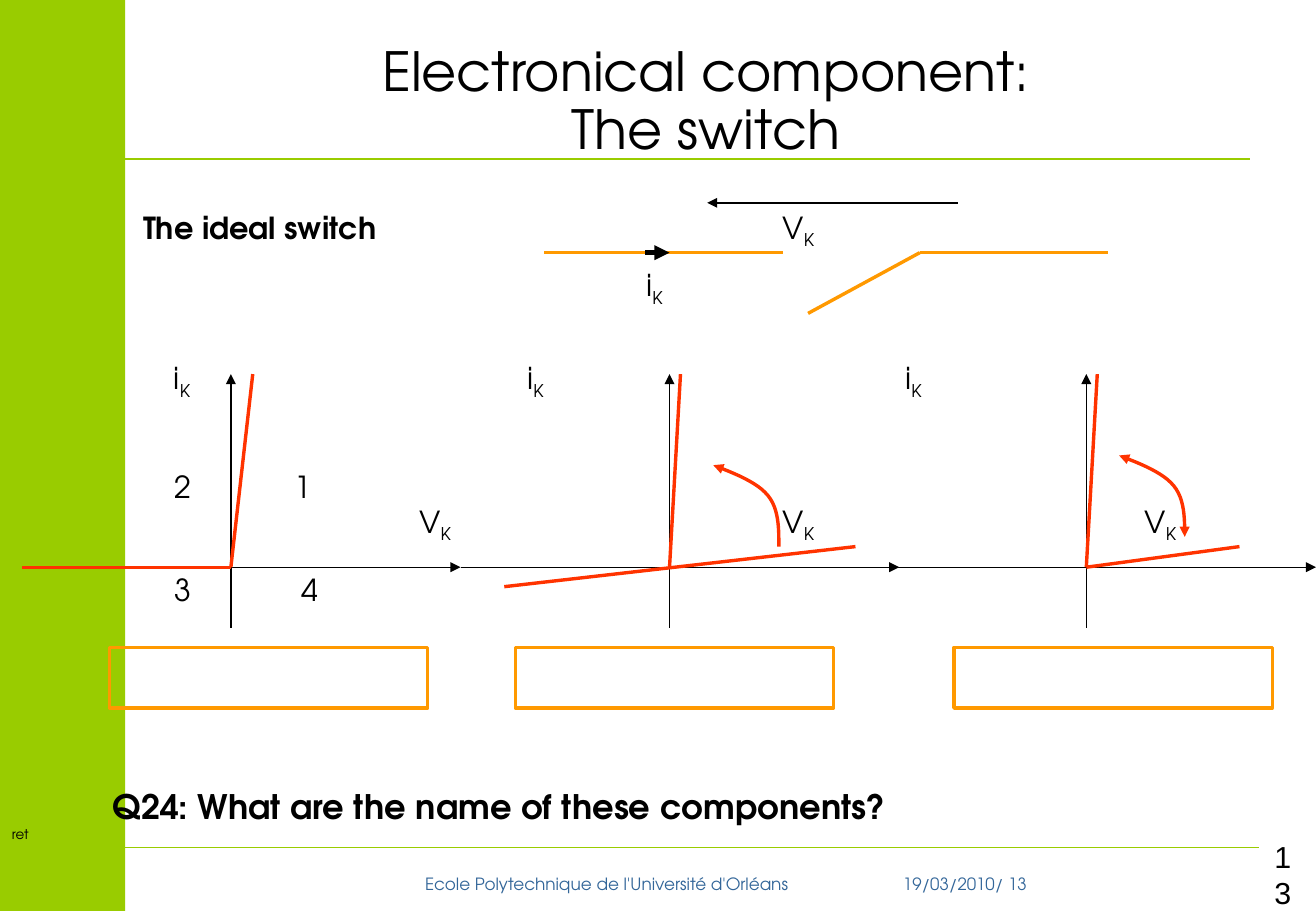
"""Build the slide on the ideal switch and its three characteristics."""
from lxml import etree
from pptx import Presentation, util as u
from pptx.dml.color import RGBColor
from pptx.enum import shapes, text
from pptx.oxml import ns

HUES = {"green": "99CC00", "blue": "336699", "black": "000000",
        "gold": "FF9900", "red": "FF3300"}
FACE = "TeX Gyre Adventor"


def tint(name):
    """Return the named colour."""
    return RGBColor.from_string(HUES[name])


def stroke(shape, hue, width, head=False, tail=False):
    """Set a line's colour and width, and its arrowheads."""
    shape.line.color.rgb = tint(hue)
    shape.line.width = u.Pt(width)
    pen = shape.line._get_or_add_ln()
    for end, used in (("a:headEnd", head), ("a:tailEnd", tail)):
        if used:
            etree.SubElement(pen, ns.qn(end), type="triangle")


def line(slide, start, stop, hue, width, tail=False):
    """Draw a straight line or arrow."""
    link = slide.shapes.add_connector(
        shapes.MSO_CONNECTOR.STRAIGHT, *map(u.Inches, start + stop))
    stroke(link, hue, width, tail=tail)
    etree.SubElement(link._element.spPr, ns.qn("a:effectLst"))


def box(slide, left, top, width, height, fill=None, edge=None):
    """Draw a filled or outlined rectangle."""
    rect = slide.shapes.add_shape(
        shapes.MSO_SHAPE.RECTANGLE, *map(u.Inches, (left, top, width, height)))
    rect.shadow.inherit = False
    if fill:
        rect.fill.solid()
        rect.fill.fore_color.rgb = tint(fill)
    else:
        rect.fill.background()
    if edge:
        stroke(rect, edge, 2)
    else:
        rect.line.fill.background()


def bend(slide, left, top, head=False):
    """Draw a curved arrow that rises to the left."""
    legs = [((0.54, 0.67), (0.54, 0.52), (0.54, 0.36), (0.45, 0.25)),
            ((0.45, 0.25), (0.36, 0.14), (0.18, 0.07), (0, 0))]
    steps = 12
    spots = []
    for leg in legs:
        for step in range(steps + 1):
            t = step / steps
            parts = ((1 - t) ** 3, 3 * t * (1 - t) ** 2, 3 * t * t * (1 - t), t ** 3)
            x, y = (sum(p * c for p, c in zip(parts, axis)) for axis in zip(*leg))
            spots.append((u.Inches(left + x), u.Inches(top + y)))
    pen = slide.shapes.build_freeform(*spots[0])
    pen.add_line_segments(spots[1:], close=False)
    curve = pen.convert_to_shape()
    curve.shadow.inherit = False
    curve.fill.background()
    stroke(curve, "red", 2, head, True)


def add_run(para, words, size, hue="black", bold=False, face=FACE, sub=False):
    """Add one run of text."""
    run = para.add_run()
    run.text = words
    run.font.size = u.Pt(size)
    run.font.name = face
    run.font.bold = bold
    run.font.color.rgb = tint(hue)
    if sub:
        run._r.get_or_add_rPr().set("baseline", "-25000")


def note(slide, left, top, width, height, words, size, align="LEFT", **style):
    """Add a wrapped text box of one run."""
    frame = slide.shapes.add_textbox(
        *map(u.Inches, (left, top, width, height))).text_frame
    frame.word_wrap = True
    para = frame.paragraphs[0]
    para.alignment = getattr(text.PP_ALIGN, align)
    add_run(para, words, size, **style)


def label(slide, left, base, words, sub=""):
    """Set a short label on a baseline, with an optional subscript."""
    frame = slide.shapes.add_textbox(
        *map(u.Inches, (left, base - 0.25, 0.4, 0.31))).text_frame
    frame.word_wrap = False
    frame.margin_left = frame.margin_right = 0
    frame.margin_top = frame.margin_bottom = 0
    add_run(frame.paragraphs[0], words, 18)
    if sub:
        add_run(frame.paragraphs[0], sub, 18, sub=True)


def set_title(slide):
    """Place and fill the title."""
    title = slide.shapes.title
    title.left, title.top, title.width, title.height = map(
        u.Inches, (1.33, 0.3, 8.96, 1.2))
    frame = title.text_frame
    frame.auto_size = text.MSO_AUTO_SIZE.NONE
    frame.vertical_anchor = text.MSO_ANCHOR.TOP
    frame.margin_top = u.Inches(0.07)
    for i, words in enumerate(("Electronical component:", "The switch")):
        para = frame.add_paragraph() if i else frame.paragraphs[0]
        para.alignment = text.PP_ALIGN.CENTER
        para.line_spacing = 0.9
        para.space_before = u.Pt(0)
        add_run(para, words, 32)


def draw_switch(slide):
    """Draw the open switch with its voltage and current."""
    for start, stop in (((4.48, 2.08), (6.44, 2.08)),
                        ((6.65, 2.58), (7.57, 2.08)),
                        ((7.57, 2.08), (9.12, 2.08))):
        line(slide, start, stop, "gold", 2)
    line(slide, (5.31, 2.08), (5.51, 2.08), "black", 3, True)
    line(slide, (7.88, 1.67), (5.82, 1.67), "black", 1.5, True)
    label(slide, 6.44, 1.97, "V", "K")
    label(slide, 5.32, 2.44, "i", "K")


def draw_plots(slide):
    """Draw the three plots, each with its answer box."""
    plots = [(1.9, 0.18, 1.43, 3.45, 0.9), (5.51, 3.79, 4.34, 6.44, 4.24),
             (8.94, 7.22, 7.45, 9.42, 7.85)]
    for mid, left, amp, volt, slot in plots:
        label(slide, amp, 3.21, "i", "K")
        label(slide, volt, 4.39, "V", "K")
        line(slide, (mid, 5.17), (mid, 3.08), "black", 0.75, True)
        line(slide, (left, 4.67), (left + 3.61, 4.67), "black", 0.75, True)
        box(slide, slot, 5.33, 2.62, 0.5, edge="gold")
    for start, stop in (((0.18, 4.67), (1.9, 4.67)), ((1.9, 4.67), (2.08, 3.08)),
                        ((4.15, 4.83), (7.04, 4.5)), ((5.51, 4.67), (5.6, 3.08)),
                        ((8.94, 4.67), (10.2, 4.5)), ((8.94, 4.67), (9.03, 3.08))):
        line(slide, start, stop, "red", 2)
    bend(slide, 5.87, 3.83)
    bend(slide, 9.21, 3.75, True)
    for left, base, digit in ((2.42, 4.1, "1"), (1.44, 4.1, "2"),
                              (1.44, 4.95, "3"), (2.48, 4.95, "4")):
        label(slide, left, base, digit)


def main():
    """Build and save the slide."""
    deck = Presentation()
    deck.slide_width, deck.slide_height = u.Inches(10.83), u.Inches(7.5)
    slide = deck.slides.add_slide(deck.slide_layouts[5])
    set_title(slide)
    line(slide, (1.03, 6.98), (10.36, 6.98), "green", 0.75)
    line(slide, (1.03, 1.31), (10.29, 1.31), "green", 0.75)
    box(slide, 0, 0, 1.03, 7.5, fill="green")
    note(slide, 3.4, 7.14, 3.38, 0.27,
         "Ecole Polytechnique de l'Université d'Orléans", 10, hue="blue")
    note(slide, 6.53, 7.14, 2.82, 0.27, "19/03/2010/ 13", 10, "CENTER", hue="blue")
    note(slide, 10.39, 6.85, 0.44, 0.52, "13", 18, face="Arial")
    note(slide, 1.08, 1.67, 2.99, 0.41, "The ideal switch", 18, bold=True)
    draw_switch(slide)
    draw_plots(slide)
    note(slide, 0, 6.75, 0.81, 0.23, "ret", 8)
    note(slide, 0.83, 6.42, 9.17, 0.43,
         "Q24: What are the name of these components?", 20, bold=True)
    deck.save("out.pptx")


if __name__ == "__main__":
    main()
